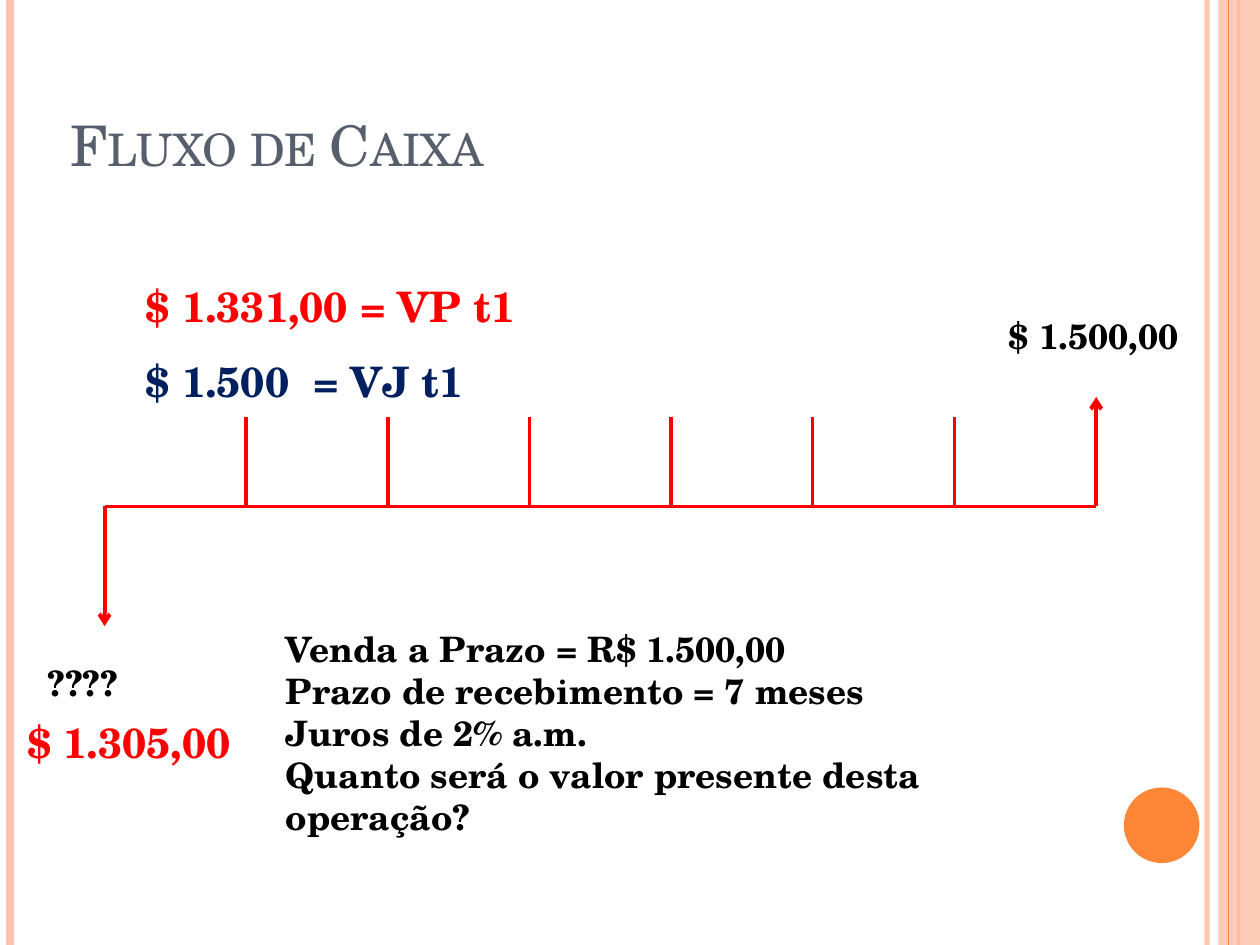
from lxml import etree
from pptx import Presentation
from pptx import util as u
from pptx.dml.color import RGBColor
from pptx.enum import shapes, text
from pptx.oxml.ns import qn

FONT = "TeX Gyre Schola"
RED = RGBColor(0xFF, 0x00, 0x00)
NAVY = RGBColor(0x00, 0x20, 0x60)
BLACK = RGBColor(0x00, 0x00, 0x00)
SLATE = RGBColor(0x57, 0x5F, 0x6D)
ORANGE = RGBColor(0xFE, 0x86, 0x37)
PEACH = RGBColor(0xFE, 0xC3, 0xAE)

WIDTH, HEIGHT = 10, 7.5
TITLE = "Fluxo de Caixa"
TITLE_AREA = (0.46, 0.21, 8.17, 1.25)

# x, colour, points, opacity in percent
RAILS = [(9.58, PEACH, 3, 93), (0.08, PEACH, 4.5, 100), (9.83, ORANGE, 1.5, 100)]
INNER_RAIL = (9.75, ORANGE, 0.75, 100)
BAND = (9.67, 0, 0.33, HEIGHT)
DOT = (8.92, 6.25, 0.6, 0.6)

# Timeline: one column per month
MONTHS = 7
LEFT, TOP, SPAN, TICK = 0.83, 3.31, 7.87, 0.71
BASE, RIGHT = TOP + TICK, LEFT + SPAN
LINE_POINTS = 2.25
ARROWS = [(LEFT, 4.97), (RIGHT, 3.15)]  # x, y of the tip

# area, size, colour, lines
LABELS = [
    ((0.28, 5.2, 2.2, 0.44), 20, BLACK, ["????"]),
    ((7.91, 2.45, 1.57, 0.44), 20, BLACK, ["$ 1.500,00"]),
    ((2.17, 4.93, 6.77, 1.45), 20, BLACK, [
        "Venda a Prazo = R$ 1.500,00",
        "Prazo de recebimento = 7 meses",
        "Juros de 2% a.m.",
        "Quanto será o valor presente desta operação?",
    ]),
    ((0.12, 5.64, 1.89, 0.5), 24, RED, ["$ 1.305,00"]),
    ((1.06, 2.18, 3.54, 0.5), 24, RED, ["$ 1.331,00 = VP t1"]),
    ((1.06, 2.77, 3.54, 0.5), 24, NAVY, ["$ 1.500  = VJ t1"]),
]


def inches(values):
    return [u.Inches(value) for value in values]


def set_opacity(fill, percent):
    color = fill._xPr.find(qn("a:solidFill"))[0]
    etree.SubElement(color, qn("a:alpha"), val=str(percent * 1000))


def add_line(page, start, end, color, points):
    line = page.shapes.add_connector(
        shapes.MSO_CONNECTOR.STRAIGHT, *inches(start + end))
    line.line.color.rgb = color
    line.line.width = u.Pt(points)
    etree.SubElement(line._element.spPr, qn("a:effectLst"))
    return line


def add_rail(page, x, color, points, opacity):
    rail = add_line(page, (x, 0), (x, HEIGHT), color, points)
    if opacity < 100:
        set_opacity(rail.line.fill, opacity)


def add_solid(page, kind, area, color):
    shape = page.shapes.add_shape(kind, *inches(area))
    shape.shadow.inherit = False
    shape.fill.solid()
    shape.fill.fore_color.rgb = color
    shape.line.fill.background()
    return shape


def set_borders(cell, visible):
    """Draw the sides named in visible (L, R, T, B) and clear the others."""
    props = cell._tc.get_or_add_tcPr()
    for side in "LRTB":
        border = etree.SubElement(
            props, qn("a:ln" + side), w=str(u.Pt(LINE_POINTS)))
        if side in visible:
            fill = etree.SubElement(border, qn("a:solidFill"))
            etree.SubElement(fill, qn("a:srgbClr"), val=str(RED))
        else:
            etree.SubElement(border, qn("a:noFill"))


def add_timeline(page):
    frame = page.shapes.add_table(
        1, MONTHS, *inches((LEFT, TOP, SPAN, TICK)))
    table = frame.table
    table.first_row = table.horz_banding = False
    for month in range(MONTHS):
        table.columns[month].width = u.Inches(SPAN / MONTHS)
        cell = table.cell(0, month)
        sides = "B" + "L" * (month > 0) + "R" * (month < MONTHS - 1)
        set_borders(cell, sides)
        cell.fill.background()
    for x, tip in ARROWS:
        arrow = add_line(page, (x, BASE), (x, tip), RED, LINE_POINTS)
        etree.SubElement(arrow.line._get_or_add_ln(), qn("a:tailEnd"), type="arrow")


def format_span(span, size, color, bold):
    values = {"name": FONT, "size": u.Pt(size), "bold": bold}
    for name, value in values.items():
        setattr(span.font, name, value)
    span.font.color.rgb = color


def add_label(page, area, size, color, lines):
    box = page.shapes.add_textbox(*inches(area))
    frame = box.text_frame
    frame.word_wrap = True
    frame.auto_size = text.MSO_AUTO_SIZE.SHAPE_TO_FIT_TEXT
    frame.text = "\n".join(lines)
    for para in frame.paragraphs:
        format_span(para.runs[0], size, color, True)


def format_title(page):
    title = page.shapes.title
    places = zip(("left", "top", "width", "height"), inches(TITLE_AREA))
    for name, value in places:
        setattr(title, name, value)
    frame = title.text_frame
    frame.text = TITLE
    frame.vertical_anchor = text.MSO_ANCHOR.BOTTOM
    frame.auto_size = text.MSO_AUTO_SIZE.NONE
    para = frame.paragraphs[0]
    para.alignment = text.PP_ALIGN.LEFT
    span = para.runs[0]
    format_span(span, 32, SLATE, False)
    span.font._element.set("cap", "small")


def main():
    deck = Presentation()
    deck.slide_width, deck.slide_height = inches((WIDTH, HEIGHT))
    page = deck.slides.add_slide(deck.slide_layouts[5])
    for rail in RAILS:
        add_rail(page, *rail)
    band = add_solid(page, shapes.MSO_SHAPE.RECTANGLE, BAND, PEACH)
    set_opacity(band.fill, 87)
    add_rail(page, *INNER_RAIL)
    add_solid(page, shapes.MSO_SHAPE.OVAL, DOT, ORANGE)
    add_timeline(page)
    format_title(page)
    for label in LABELS:
        add_label(page, *label)
    deck.save("out.pptx")


if __name__ == "__main__":
    main()
